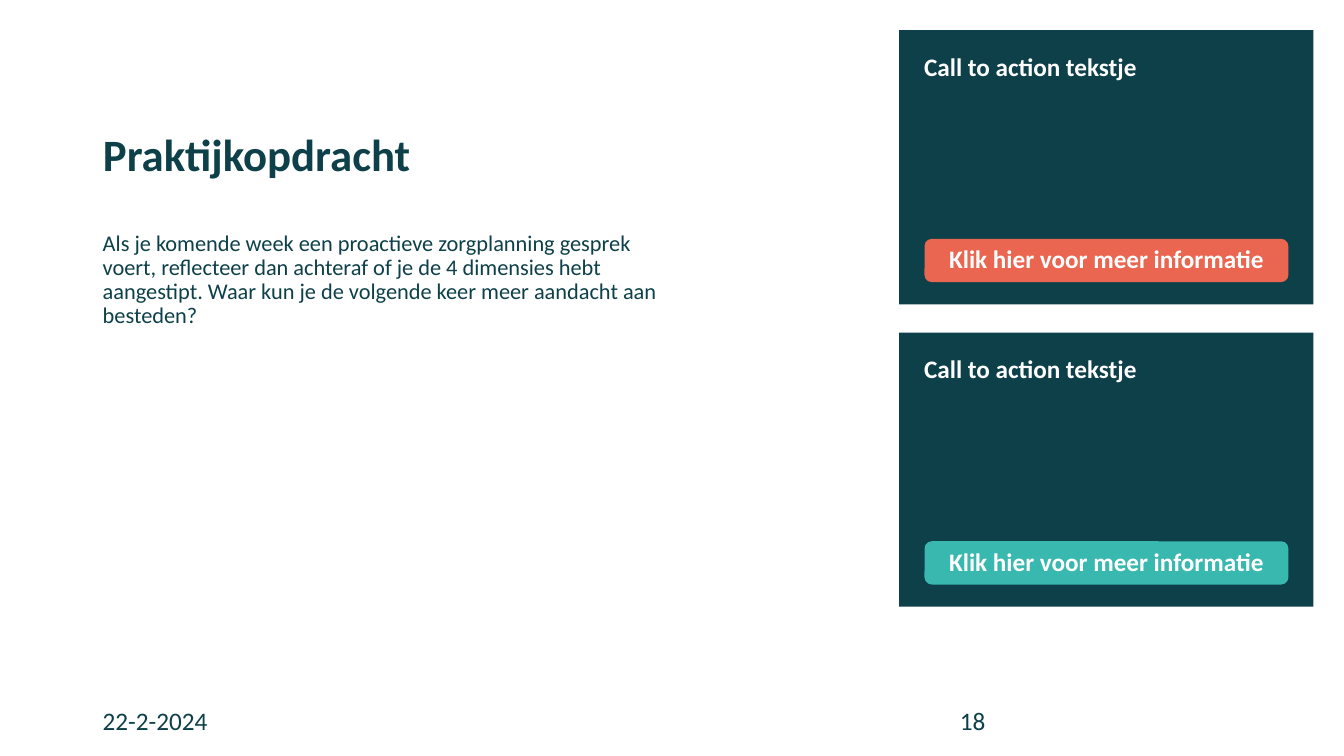
from dataclasses import dataclass

from pptx import Presentation
from pptx.dml.color import RGBColor
from pptx.enum.shapes import MSO_SHAPE
from pptx.enum.text import MSO_ANCHOR, MSO_AUTO_SIZE, PP_ALIGN
from pptx.util import Cm, Pt


@dataclass(frozen=True)
class Theme:
    """Colours, font and type sizes of the slide."""
    dark: str = "0D4049"
    light: str = "FFFFFF"
    coral: str = "EB6650"
    teal: str = "38B8AF"
    font: str = "Calibri"
    title: int = 32
    label: int = 18
    body: int = 16


THEME = Theme()


def write(shape, text, size=THEME.label, color=THEME.dark, bold=False,
          align=PP_ALIGN.LEFT, anchor=MSO_ANCHOR.TOP, line=1.0):
    """Put formatted text in a shape."""
    frame = shape.text_frame
    frame.word_wrap = True
    frame.auto_size = MSO_AUTO_SIZE.NONE
    frame.vertical_anchor = anchor
    frame.text = text
    para = frame.paragraphs[0]
    para.alignment = align
    para.line_spacing = line
    font = para.font
    font.name, font.size, font.bold = THEME.font, Pt(size), bold
    font.color.rgb = RGBColor.from_string(color)


def label(slide, box, text, **style):
    """Add a text box at left, top, width, height in centimetres."""
    write(slide.shapes.add_textbox(*map(Cm, box)), text, **style)


def block(slide, kind, box, color):
    """Add a filled shape without outline or shadow."""
    shape = slide.shapes.add_shape(kind, *map(Cm, box))
    shape.shadow.inherit = False
    shape.fill.solid()
    shape.fill.fore_color.rgb = RGBColor.from_string(color)
    shape.line.fill.background()
    return shape


def task(slide, box):
    """Place the title and the assignment below it."""
    left, top, width, height = box
    title = slide.shapes.title
    title.left, title.top = Cm(left), Cm(top)
    title.width, title.height = Cm(13.77), Cm(3.68)
    write(title, "Praktijkopdracht", size=THEME.title, bold=True,
          anchor=MSO_ANCHOR.BOTTOM, line=0.9)
    label(slide, (left, top + 4.7, width, height - 4.7),
          "Als je komende week een proactieve zorgplanning gesprek voert, "
          "reflecteer dan achteraf of je de 4 dimensies hebt aangestipt. "
          "Waar kun je de volgende keer meer aandacht aan besteden?",
          size=THEME.body, line=0.9)


def panel(slide, box, color):
    """Place a call-to-action panel with its button."""
    left, top, width, height = box
    block(slide, MSO_SHAPE.RECTANGLE, box, THEME.dark)
    label(slide, (left + 0.38, top + 0.4, width - 0.7, 1.8),
          "Call to action tekstje", color=THEME.light, bold=True)
    button = block(slide, MSO_SHAPE.ROUNDED_RECTANGLE,
                   (left + 0.64, top + height - 1.65, width - 1.27, 1.09),
                   color)
    write(button, "Klik hier voor meer informatie", color=THEME.light,
          bold=True, align=PP_ALIGN.CENTER, anchor=MSO_ANCHOR.MIDDLE, line=0.9)


def footer(slide, box):
    """Place the date and the slide number."""
    left, top, width, height = box
    label(slide, (left, top, 7.62, height), "22-2-2024")
    label(slide, (left + width - 2, top, 2, height), "18")


def main():
    """Build and save the slide."""
    deck = Presentation()
    deck.slide_width, deck.slide_height = Cm(33.87), Cm(19.05)
    slide = deck.slides.add_slide(deck.slide_layouts[5])
    task(slide, (2.34, 1.02, 15.24, 15.29))
    for row, color in enumerate((THEME.coral, THEME.teal)):
        panel(slide, (22.66, 0.76 + row * 7.62, 10.44, 6.91), color)
    footer(slide, (2.34, 17.65, 23.6, 1.02))
    deck.save("out.pptx")


if __name__ == "__main__":
    main()
